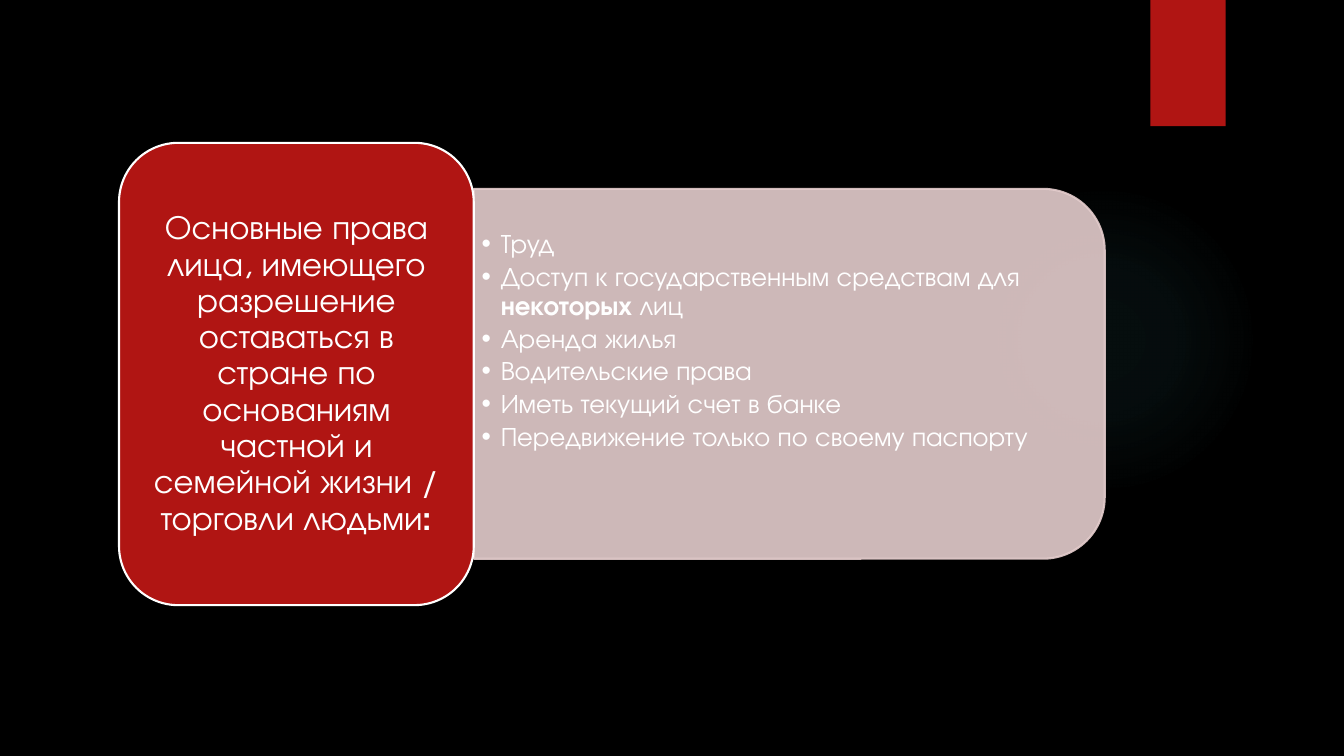
from lxml.etree import SubElement
from pptx import Presentation
from pptx.dml.color import RGBColor
from pptx.enum.shapes import MSO_SHAPE
from pptx.enum.text import MSO_ANCHOR, MSO_AUTO_SIZE, PP_ALIGN
from pptx.oxml import parse_xml
from pptx.oxml.ns import nsdecls, qn
from pptx.util import Cm, Pt

FONT = "TeX Gyre Adventor"
BLACK, WHITE, RED, ROSE, TEAL = "000000", "FFFFFF", "B01513", "E4CCCC", "50B9C1"

HEADING = [
    ("Основные права лица, имеющего разрешение оставаться в стране "
     "по основаниям частной и семейной жизни / торговли людьми", False),
    (":", True),
]
RIGHTS = [
    [("Труд", False)],
    [("Доступ к государственным средствам для ", False),
     ("некоторых ", True), ("лиц", False)],
    [("Аренда жилья", False)],
    [("Водительские права", False)],
    [("Иметь текущий счет в банке", False)],
    [("Передвижение только по своему паспорту", False)],
]


def paint(color_format, color):
    color_format.rgb = RGBColor.from_string(color)


def set_opacity(fill_element, percent):
    color = fill_element.find(".//" + qn("a:srgbClr"))
    SubElement(color, qn("a:alpha"), val=str(percent * 1000))


def add_block(page, preset, box, fill, outline=None):
    """Add a preset shape in box (left, top, width, height in cm)."""
    block = page.shapes.add_shape(preset, *map(Cm, box))
    block.shadow.inherit = False
    block.fill.solid()
    paint(block.fill.fore_color, fill)
    if outline:
        paint(block.line.color, outline)
        block.line.width = Pt(1.5)
    else:
        block.line.fill.background()
    return block


def place_text(holder, box, insets, anchor):
    """Move a placeholder into box, in front of everything drawn so far."""
    holder.left, holder.top, holder.width, holder.height = map(Cm, box)
    holder.element.getparent().append(holder.element)
    frame = holder.text_frame
    frame.word_wrap = True
    frame.auto_size = MSO_AUTO_SIZE.NONE
    frame.vertical_anchor = anchor
    (frame.margin_left, frame.margin_top,
     frame.margin_right, frame.margin_bottom) = map(Cm, insets)
    return frame


def add_spans(para, spans, size):
    para.line_spacing = 0.9
    para.space_before = Pt(0)
    for text, bold in spans:
        span = para.add_run()
        span.text = text
        span.font.name = FONT
        span.font.size = Pt(size)
        span.font.bold = bold
        paint(span.font.color, WHITE)


def add_bullet(para):
    properties = para._p.get_or_add_pPr()
    properties.set("marL", str(Cm(0.48)))
    properties.set("indent", str(-Cm(0.48)))
    SubElement(properties, qn("a:buChar"), char="•")


def draw_backdrop(page, box):
    left, top, width, height = box
    page.background.fill.solid()
    paint(page.background.fill.fore_color, BLACK)

    # Soft glow
    glow = add_block(page, MSO_SHAPE.OVAL,
                     (left + 23.9, top + 4.65, 7.82, 7.82), TEAL)
    stops = "".join(
        f'<a:gs pos="{place * 1000}"><a:srgbClr val="{TEAL}">'
        f'<a:alpha val="{opacity * 1000}"/></a:srgbClr></a:gs>'
        for place, opacity in [(0, 7), (36, 6), (69, 0)])
    gradient = parse_xml(
        f'<a:gradFill {nsdecls("a")}><a:gsLst>{stops}</a:gsLst>'
        '<a:path path="circle"><a:fillToRect l="50000" t="50000" '
        'r="50000" b="50000"/></a:path></a:gradFill>')
    solid = glow.element.spPr.find(qn("a:solidFill"))
    solid.getparent().replace(solid, gradient)

    # Ribbon hanging from the top edge
    add_block(page, MSO_SHAPE.RECTANGLE,
              (left + width - 4.88, top, 1.9, 3.18), RED)


def draw_rights_panel(page, box):
    left, top, width, height = box
    # The preset is rounded on top, so it is turned to round the right side
    turned = (left + (width - height) / 2, top + (height - width) / 2,
              height, width)
    panel = add_block(page, MSO_SHAPE.ROUND_2_SAME_RECTANGLE, turned, ROSE, ROSE)
    panel.rotation = 90
    properties = panel.element.spPr
    set_opacity(properties.find(qn("a:solidFill")), 90)
    set_opacity(properties.find(qn("a:ln")), 90)

    # Bulleted list
    frame = place_text(page.placeholders[1],
                       (left, top + 0.45, width - 0.45, height - 0.9),
                       (0.2, 0.61, 0.2, 0.1), MSO_ANCHOR.TOP)
    for number, spans in enumerate(RIGHTS):
        para = frame.add_paragraph() if number else frame.paragraphs[0]
        para.level = 1
        add_bullet(para)
        add_spans(para, spans, 19)
        para.space_after = Pt(2.85)


def draw_heading_card(page, box):
    left, top, width, height = box
    add_block(page, MSO_SHAPE.ROUNDED_RECTANGLE, box, RED, WHITE)
    frame = place_text(page.shapes.title,
                       (left + 0.43, top + 0.43, width - 0.86, height - 0.86),
                       (0.25, 0.13, 0.25, 0.13), MSO_ANCHOR.MIDDLE)
    para = frame.paragraphs[0]
    para.alignment = PP_ALIGN.CENTER
    add_spans(para, HEADING, 24)


def main():
    deck = Presentation()
    deck.slide_width, deck.slide_height = Cm(33.87), Cm(19.05)
    page = deck.slides.add_slide(deck.slide_layouts[1])
    draw_backdrop(page, (0, 0, 33.87, 19.05))
    draw_rights_panel(page, (11.94, 4.76, 15.9, 9.32))
    draw_heading_card(page, (3, 3.6, 8.94, 11.65))
    deck.save("out.pptx")


if __name__ == "__main__":
    main()
